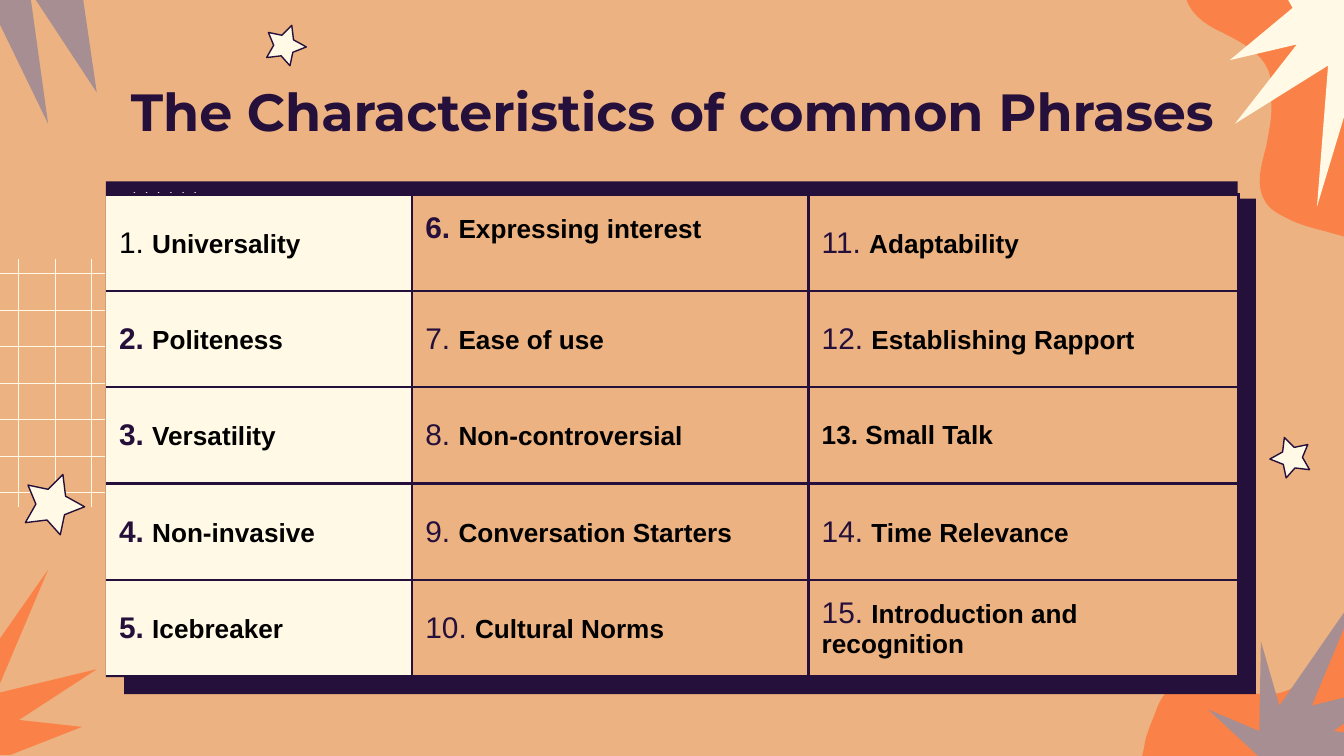
from lxml import etree
from pptx import Presentation
from pptx.dml.color import RGBColor
from pptx.enum.shapes import MSO_CONNECTOR, MSO_SHAPE
from pptx.enum.text import MSO_ANCHOR, MSO_AUTO_SIZE, PP_ALIGN
from pptx.oxml.ns import qn
from pptx.util import Cm, Pt

STRAIGHT = MSO_CONNECTOR.STRAIGHT
RECTANGLE = MSO_SHAPE.RECTANGLE
TOP, MIDDLE = MSO_ANCHOR.TOP, MSO_ANCHOR.MIDDLE
CENTER = PP_ALIGN.CENTER
NO_AUTOFIT = MSO_AUTO_SIZE.NONE

SAND = RGBColor(0xEC, 0xB2, 0x81)
CREAM = RGBColor(0xFF, 0xF9, 0xE5)
ORANGE = RGBColor(0xFA, 0x81, 0x47)
MAUVE = RGBColor(0xA7, 0x8E, 0x92)
INDIGO = RGBColor(0x25, 0x10, 0x3B)
BLACK = RGBColor(0, 0, 0)

# Outlines in centimetres: a pair is a corner, six numbers are a Bezier curve.
BOTTOM_BLOB = [
    (25.63, 11.66),
    (25.3, 11.71, 25.1, 12.01, 24.97, 12.29),
    (24.82, 12.6, 24.66, 12.95, 24.31, 13.06),
    (24.18, 13.11, 24.03, 13.13, 23.88, 13.13),
    (23.83, 13.13, 23.77, 13.11, 23.72, 13.11),
    (23.5, 13.11, 23.29, 13.08, 23.09, 13.0),
    (22.91, 12.98, 22.71, 12.93, 22.5, 12.93),
    (22.38, 12.93, 22.25, 12.95, 22.12, 13.03),
    (21.97, 13.13, 21.89, 13.31, 21.84, 13.46),
    (21.77, 13.64, 21.69, 13.82, 21.64, 14.02),
    (21.62, 14.2, 21.56, 14.38, 21.51, 14.55),
    (25.63, 14.55),
]
TOP_BLOB = [
    (22.38, -0.18),
    (22.43, 0.23, 22.76, 0.46, 23.09, 0.61),
    (23.44, 0.79, 23.83, 0.97, 23.98, 1.35),
    (24.05, 1.57, 24.03, 1.8, 24.03, 2.03),
    (24.03, 2.29, 23.98, 2.51, 23.93, 2.77),
    (23.85, 3.1, 23.7, 3.51, 23.93, 3.84),
    (24.05, 4.01, 24.26, 4.09, 24.41, 4.17),
    (24.64, 4.27, 24.84, 4.32, 25.04, 4.37),
    (25.3, 4.45, 25.55, 4.5, 25.78, 4.6),
    (25.78, -0.18),
]
BOTTOM_LEFT_BURST = [
    (0.91, 10.77), (-0.51, 12.8), (-0.51, 14.27), (0.2, 14.27),
    (1.55, 13.74), (0.36, 13.61), (1.83, 12.65), (-0.08, 13.11),
]
BOTTOM_RIGHT_BURST = [
    (25.63, 11.25), (24.18, 13.34), (23.83, 12.12), (23.8, 13.82),
    (22.83, 13.41), (23.93, 14.43), (23.75, 14.55), (25.07, 14.55),
    (25.04, 14.43), (25.63, 14.2), (25.63, 13.87), (25.2, 13.82),
    (25.63, 13.51), (25.63, 13.13), (24.79, 13.34), (25.63, 11.33),
]
TOP_RIGHT_BURST = [
    (24.26, -0.15), (24.43, 0.15), (23.24, 1.14), (24.51, 0.84),
    (23.34, 2.34), (25.1, 1.24), (24.89, 3.91), (25.76, 1.02),
    (25.78, 1.04), (25.78, -0.15),
]
TOP_LEFT_BURST = [
    (-0.33, -0.71), (-0.71, -0.33), (-0.71, 3.12), (-0.64, 3.71),
    (-0.25, -0.05), (0.91, 2.34), (0.56, -0.18), (1.83, 1.75), (1.47, -0.71),
]
STAR_WIDTH = 1.12
STAR = [
    (0.71, 0), (0.76, 0.41), (1.12, 0.61), (0.74, 0.76), (0.66, 1.14),
    (0.41, 0.86), (0, 0.91), (0.2, 0.56), (0.05, 0.2), (0.43, 0.28),
]

COLUMN_WIDTHS = [5.79, 7.49, 8.13]
ROW_HEIGHT = 1.82
PHRASE_COLUMNS = [
    ["Universality", "Politeness", "Versatility", "Non-invasive", "Icebreaker"],
    ["Expressing interest", "Ease of use", "Non-controversial",
     "Conversation Starters", "Cultural Norms"],
    ["Adaptability", "Establishing Rapport", "Small Talk", "Time Relevance",
     "Introduction and recognition"],
]
BOLD_NUMBERS = range(2, 7)
UNIFORM_NUMBER = 13
RAISED_NUMBER = 6


def add_text(paragraph, text, font="Arial", size=14, color=BLACK, bold=True):
    run = paragraph.add_run()
    run.text = text
    run.font.name = font
    run.font.size = Pt(size)
    run.font.color.rgb = color
    run.font.bold = bold


def flatten(outline, steps=8):
    """Turn the Bezier curves of an outline into short straight pieces."""
    points = [outline[0]]
    for part in outline[1:]:
        if len(part) == 2:
            points.append(part)
            continue
        start, (x1, y1, x2, y2, x3, y3) = points[-1], part
        for step in range(1, steps + 1):
            t = step / steps
            weights = ((1 - t) ** 3, 3 * t * (1 - t) ** 2, 3 * t * t * (1 - t), t ** 3)
            points.append(tuple(
                sum(w * v for w, v in zip(weights, values))
                for values in ((start[0], x1, x2, x3), (start[1], y1, y2, y3))))
    return points


def add_outline(slide, outline, fill, line=None):
    points = [(Cm(x), Cm(y)) for x, y in flatten(outline)]
    builder = slide.shapes.build_freeform(*points[0])
    builder.add_line_segments(points[1:], close=True)
    figure = builder.convert_to_shape()
    figure.shadow.inherit = False
    figure.fill.solid()
    figure.fill.fore_color.rgb = fill
    if line is None:
        figure.line.fill.background()
    else:
        figure.line.color.rgb = line
        figure.line.width = Pt(0.75)


def add_star(slide, left, top, scale=1, mirrored=False):
    outline = [(left + scale * (STAR_WIDTH - x if mirrored else x), top + scale * y)
               for x, y in STAR]
    add_outline(slide, outline, CREAM, line=INDIGO)


def add_cross(slide, left, top, size=0.33, arm=0.05):
    mid = size / 2
    outline = [
        (0, arm), (mid - arm, mid), (0, size - arm), (arm, size),
        (mid, mid + arm), (size - arm, size), (size, size - arm),
        (mid + arm, mid), (size, arm), (size - arm, 0), (mid, mid - arm), (arm, 0),
    ]
    add_outline(slide, [(left + x, top + y) for x, y in outline], CREAM)


def add_grid_line(slide, x1, y1, x2, y2):
    grid_line = slide.shapes.add_connector(STRAIGHT, Cm(x1), Cm(y1), Cm(x2), Cm(y2))
    grid_line.line.color.rgb = CREAM
    grid_line.line.width = Pt(0.4)
    etree.SubElement(grid_line._element.spPr, qn("a:effectLst"))


def add_window(slide):
    """Dark panel with a hard offset shadow and a row of crosses."""
    panel = slide.shapes.add_shape(RECTANGLE, Cm(2), Cm(3.43), Cm(21.39), Cm(9.37))
    panel.fill.solid()
    panel.fill.fore_color.rgb = INDIGO
    panel.line.fill.background()
    panel.shadow.inherit = False
    effects = panel._element.spPr.find(qn("a:effectLst"))
    shadow = etree.SubElement(effects, qn("a:outerShdw"), blurRad="0",
                              dist=str(Pt(13.5)), dir=str(43 * 60000),
                              algn="bl", rotWithShape="0")
    etree.SubElement(shadow, qn("a:srgbClr"), val=str(INDIGO))
    for index in range(3):
        add_cross(slide, 2.49 + 0.46 * index, 3.63)


def set_borders(cell, open_left):
    properties = cell._tc.get_or_add_tcPr()
    for side in "LRTB":
        border = etree.SubElement(properties, qn(f"a:ln{side}"), w=str(Pt(1.5)))
        if side == "L" and open_left:
            etree.SubElement(border, qn("a:noFill"))
        else:
            fill = etree.SubElement(border, qn("a:solidFill"))
            etree.SubElement(fill, qn("a:srgbClr"), val=str(INDIGO))


def fill_cell(cell, number, phrase, first_column):
    set_borders(cell, open_left=first_column)
    cell.fill.solid()
    cell.fill.fore_color.rgb = CREAM if first_column else SAND
    cell.vertical_anchor = MIDDLE
    cell.margin_left = cell.margin_right = Cm(0.25)
    cell.margin_top = 0
    cell.margin_bottom = Cm(0.56) if number == RAISED_NUMBER else 0
    paragraph = cell.text_frame.paragraphs[0]
    if number == UNIFORM_NUMBER:
        add_text(paragraph, f"{number}. {phrase}")
    else:
        add_text(paragraph, f"{number}. ", size=16, bold=number in BOLD_NUMBERS,
                 color=BLACK if number == 1 else INDIGO)
        add_text(paragraph, phrase)


def add_phrase_table(slide):
    row_count = len(PHRASE_COLUMNS[0])
    table = slide.shapes.add_table(
        row_count, len(PHRASE_COLUMNS), Cm(2), Cm(3.68),
        Cm(sum(COLUMN_WIDTHS)), Cm(ROW_HEIGHT * row_count)).table
    table.first_row = table.horz_banding = False
    for row in table.rows:
        row.height = Cm(ROW_HEIGHT)
    for column, phrases in enumerate(PHRASE_COLUMNS):
        table.columns[column].width = Cm(COLUMN_WIDTHS[column])
        for row, phrase in enumerate(phrases):
            number = column * row_count + row + 1
            fill_cell(table.cell(row, column), number, phrase, column == 0)


def set_title(slide, text):
    title = slide.shapes.title
    title.left, title.top, title.width, title.height = Cm(2), Cm(1.24), Cm(21.41), Cm(1.6)
    frame = title.text_frame
    frame.margin_left = frame.margin_right = Cm(0.25)
    frame.margin_top = frame.margin_bottom = Cm(0.25)
    frame.vertical_anchor = TOP
    frame.auto_size = NO_AUTOFIT
    frame.word_wrap = True
    frame.paragraphs[0].alignment = CENTER
    add_text(frame.paragraphs[0], text, font="Montserrat", size=28, color=INDIGO)


def add_decoration(slide):
    for index in range(3):
        x = 0.35 + 0.69 * index
        add_grid_line(slide, x, 4.9, x, 9.58)
    for index in range(7):
        y = 5.17 + 0.69 * index
        add_grid_line(slide, -2.64, y, 1.98, y)
    for outline, color in (
            (BOTTOM_BLOB, ORANGE), (TOP_BLOB, ORANGE), (BOTTOM_LEFT_BURST, ORANGE),
            (BOTTOM_RIGHT_BURST, MAUVE), (TOP_RIGHT_BURST, CREAM), (TOP_LEFT_BURST, MAUVE)):
        add_outline(slide, outline, color)
    add_star(slide, 24, 8.27, scale=0.67, mirrored=True)
    add_star(slide, 5.04, 0.48, scale=0.67)
    add_star(slide, 0.48, 8.97)


def main():
    presentation = Presentation()
    presentation.slide_width, presentation.slide_height = Cm(25.4), Cm(14.29)
    slide = presentation.slides.add_slide(presentation.slide_layouts[5])
    slide.background.fill.solid()
    slide.background.fill.fore_color.rgb = SAND
    add_decoration(slide)
    add_window(slide)
    set_title(slide, "The Characteristics of common Phrases")
    add_phrase_table(slide)
    presentation.save("out.pptx")


if __name__ == "__main__":
    main()
